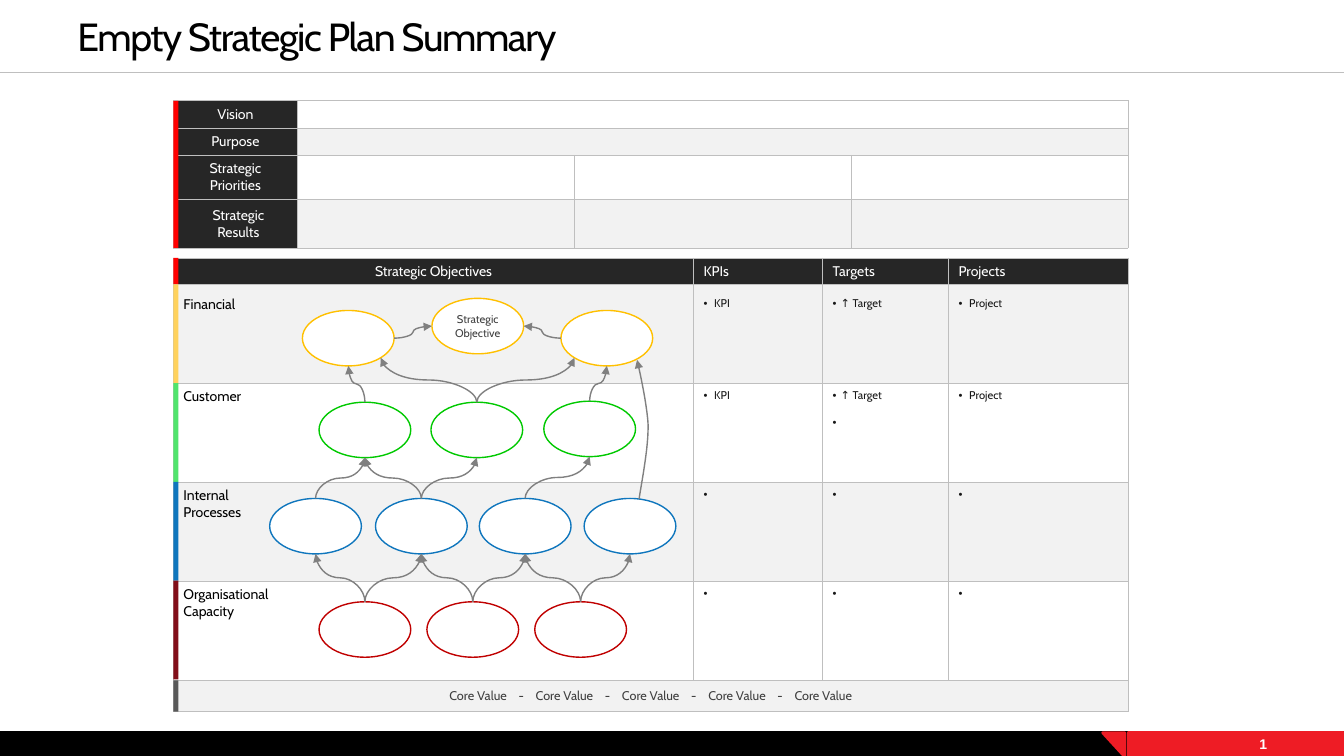
import math

import pptx
import pptx.dml.color
import pptx.enum.shapes
import pptx.enum.text
import pptx.oxml
import pptx.oxml.ns
import pptx.util

GRID = pptx.util.Inches(0.1)
WIDTH, HEIGHT = 133.33, 75
LEFT, TABLE_WIDTH, BAR = 17.2, 94.7, 0.5
OVAL_WIDTH, OVAL_HEIGHT = 9.1, 5.5
DARK, PALE, WHITE, BORDER, RED = "262626", "F2F2F2", "FFFFFF", "BFBFBF", "EE1C25"
SHAPES = pptx.enum.shapes.MSO_SHAPE
CENTER = pptx.enum.text.PP_ALIGN.CENTER
RIGHT = pptx.enum.text.PP_ALIGN.RIGHT
MIDDLE = pptx.enum.text.MSO_ANCHOR.MIDDLE
TOP = pptx.enum.text.MSO_ANCHOR.TOP
DIAGONAL = math.sqrt(0.5)
SIDES = {
    "top": (0, -1), "bottom": (0, 1), "left": (-1, 0), "right": (1, 0),
    "lower left": (-DIAGONAL, DIAGONAL), "lower right": (DIAGONAL, DIAGONAL),
}
OVALS = {
    "FFC000": [(34.55, 33.55), (47.4, 32.35), (60.2, 33.55)],
    "00C900": [(36.2, 42.65), (47.3, 42.65), (58.5, 42.55)],
    "0F76BD": [(31.3, 52.2), (41.8, 52.2), (52.1, 52.2), (62.5, 52.2)],
    "C00000": [(36.2, 62.45), (46.9, 62.45), (57.6, 62.45)],
}
FINANCIAL, CUSTOMER, PROCESS, CAPACITY = OVALS.values()
UPWARD_LINKS = [
    (CUSTOMER[0], FINANCIAL[0], "bottom"), (CUSTOMER[1], FINANCIAL[0], "lower right"),
    (CUSTOMER[1], FINANCIAL[2], "lower left"), (CUSTOMER[2], FINANCIAL[2], "bottom"),
    (PROCESS[0], CUSTOMER[0], "bottom"), (PROCESS[1], CUSTOMER[0], "bottom"),
    (PROCESS[1], CUSTOMER[1], "bottom"), (PROCESS[2], CUSTOMER[2], "bottom"),
] + [(CAPACITY[i], PROCESS[i + step], "bottom") for i in range(3) for step in (0, 1)]
LONG_CURVE = [
    ((63.4, 49.5), (63.8, 47), (64.3, 44.5), (64.3, 42.2)),
    ((64.3, 42.2), (64.2, 39.9), (63.2, 35.7), (63.2, 35.7)),
]


def grid(*cells):
    return [round(cell * GRID) for cell in cells]


def color(value):
    return pptx.dml.color.RGBColor.from_string(value)


def format_text(frame, size, text_color, font="Cabin", align=None, anchor=TOP, bold=False):
    frame.vertical_anchor = anchor
    for paragraph in frame.paragraphs:
        paragraph.alignment = align
        for run in paragraph.runs:
            run.font.size = pptx.util.Pt(size)
            run.font.name = font
            run.font.bold = bold
            run.font.color.rgb = color(text_color)


def set_margins(holder, left, top, right, bottom):
    holder.margin_left, holder.margin_top, holder.margin_right, holder.margin_bottom = grid(
        left, top, right, bottom)


def add_text(slide, box, text, size, text_color, **style):
    frame = slide.shapes.add_textbox(*grid(*box)).text_frame
    frame.word_wrap = True
    frame.text = text
    set_margins(frame, 1, 0, 1, 0)
    format_text(frame, size, text_color, anchor=MIDDLE, **style)
    return frame


def add_shape(slide, kind, box, fill, line=None, line_width=1):
    shape = slide.shapes.add_shape(kind, *grid(*box))
    shape.shadow.inherit = False
    shape.fill.solid()
    shape.fill.fore_color.rgb = color(fill)
    if line:
        shape.line.color.rgb = color(line)
        shape.line.width = pptx.util.Pt(line_width)
    else:
        shape.line.fill.background()
    return shape


def add_arrowhead(line):
    line.line.color.rgb = color("808080")
    line.line.width = pptx.util.Pt(1)
    pptx.oxml.ns.qn("a:ln")
    outline = line.line._get_or_add_ln()
    outline.append(element('<a:tailEnd {} type="triangle"/>'))


def element(markup):
    return pptx.oxml.parse_xml(markup.format(pptx.oxml.ns.nsdecls("a")))


def site(oval, side):
    return [center + share * length / 2 for center, share, length
            in zip(oval, SIDES[side], (OVAL_WIDTH, OVAL_HEIGHT))]


def add_curve(slide, start, end, upward=False):
    (x1, y1), (x2, y2) = start, end
    direction = 1 if x2 > x1 else -1
    if upward:
        middle_x, middle_y = (x1 + x2) / 2, (y1 + y2) / 2
        half_rise, half_run = (y1 - y2) / 2, abs(x2 - x1) / 2
        x1, x2 = middle_x + direction * half_rise, middle_x - direction * half_rise
        y1, y2 = middle_y + half_run, middle_y - half_run
    connector = slide.shapes.add_connector(
        pptx.enum.shapes.MSO_CONNECTOR.CURVE, *grid(x1, y1, x2, y2))
    properties = connector._element.spPr
    if upward:
        properties.xfrm.set("rot", str((90 if direction > 0 else 270) * 60000))
    add_arrowhead(connector)
    properties.append(element("<a:effectLst {}/>"))


def add_long_curve(slide):
    points = []
    for a, b, c, d in LONG_CURVE:
        for step in range(1, 13):
            t = step / 12
            points.append(grid(*[
                (1 - t) ** 3 * p + 3 * (1 - t) ** 2 * t * q + 3 * (1 - t) * t ** 2 * r + t ** 3 * s
                for p, q, r, s in zip(a, b, c, d)]))
    builder = slide.shapes.build_freeform(*grid(*LONG_CURVE[0][0]))
    builder.add_line_segments(points, close=False)
    curve = builder.convert_to_shape()
    curve.shadow.inherit = False
    curve.fill.background()
    add_arrowhead(curve)


def add_table(slide, top, columns, rows):
    table = slide.shapes.add_table(
        len(rows), len(columns), *grid(LEFT, top, TABLE_WIDTH, sum(rows))).table
    table.first_row = table.horz_banding = False
    for column, width in zip(table.columns, columns):
        column.width = grid(width)[0]
    for row, height in zip(table.rows, rows):
        row.height = grid(height)[0]
    return table


def fill_cell(cell, fill, text="", size=10, text_color="000000", **style):
    for edge in "LRTB":
        cell._tc.get_or_add_tcPr().append(element(
            f'<a:ln{edge} {{}} w="6350"><a:solidFill><a:srgbClr val="{BORDER}"/>'
            f'</a:solidFill></a:ln{edge}>'))
    cell.fill.solid()
    cell.fill.fore_color.rgb = color(fill)
    cell.text_frame.text = text
    format_text(cell.text_frame, size, text_color, **style)
    cell.vertical_anchor = style.get("anchor", TOP)
    if not text:
        cell.text_frame.paragraphs[0]._p.get_or_add_endParaRPr().set("sz", "1000")


def add_bullets(cell):
    for index, paragraph in enumerate(cell.text_frame.paragraphs):
        properties = paragraph._p.get_or_add_pPr()
        properties.set("marL", "73152")
        properties.set("indent", "-73152")
        properties.append(element('<a:buFont {} typeface="Arial"/>'))
        properties.append(element('<a:buChar {} char="•"/>'))
        if index:
            paragraph.space_before = pptx.util.Pt(10)


def add_direction_table(slide):
    labels = ["Vision", "Purpose", "Strategic\nPriorities", "Strategic\nResults"]
    table = add_table(slide, 10, [12.3] + [27.47] * 3, [2.7, 2.7, 4.4, 4.8])
    for row, label in enumerate(labels):
        anchor = MIDDLE if row > 1 else TOP
        fill_cell(table.cell(row, 0), DARK, label, 10, WHITE, align=CENTER, anchor=anchor)
        for column in range(1, 4):
            fill_cell(table.cell(row, column), PALE if row % 2 else WHITE)
        if row < 2:
            table.cell(row, 1).merge(table.cell(row, 3))
    table.cell(3, 0).margin_left = grid(1.6)[0]


def add_objectives_table(slide):
    headings = ["Strategic Objectives", "KPIs", "Targets", "Projects"]
    perspectives = [
        ["Financial", " KPI", "↑ Target", " Project"],
        ["Customer", " KPI", "↑ Target\n ", " Project"],
        ["Internal\vProcesses", " ", " ", " "],
        ["Organisational\vCapacity", " ", " ", " "],
    ]
    table = add_table(slide, 25.6, [51.6, 12.8, 12.5, 17.8], [2.6] + [9.83] * 4 + [3.1])
    for column, heading in enumerate(headings):
        cell = table.cell(0, column)
        fill_cell(cell, DARK, heading, 10, WHITE, align=None if column else CENTER, anchor=MIDDLE)
        set_margins(cell, 1, 0, 1, 0)
    for row, texts in enumerate(perspectives, 1):
        for column, text in enumerate(texts):
            cell = table.cell(row, column)
            fill_cell(cell, PALE if row % 2 else WHITE, text,
                      8 if column else 10, "181818" if column else "000000")
            if column:
                add_bullets(cell)
            if row == 1:
                cell.margin_top = grid(1.2)[0]
    for column in range(4):
        values = "\t" + "\t-\t".join(["Core Value"] * 5) if column == 0 else ""
        fill_cell(table.cell(5, column), PALE, values, 9, "404040", anchor=MIDDLE)
    stops = "".join(f'<a:tab pos="{grid(46.35 + 4.28 * (stop - 4))[0]}" algn="ctr"/>'
                    for stop in range(9))
    values_paragraph = table.cell(5, 0).text_frame.paragraphs[0]
    values_paragraph._p.get_or_add_pPr().append(element("<a:tabLst {}>" + stops + "</a:tabLst>"))
    table.cell(5, 0).merge(table.cell(5, 3))


def add_frame(slide):
    add_shape(slide, SHAPES.RECTANGLE, (0, 72.7, WIDTH, 2.4), "000000", "000000", 2.08)
    rule = slide.shapes.add_connector(
        pptx.enum.shapes.MSO_CONNECTOR.STRAIGHT, *grid(0, 7.2, WIDTH, 7.2))
    rule.line.color.rgb = color(BORDER)
    rule.line.width = pptx.util.Pt(1)
    rule._element.spPr.append(element("<a:effectLst {}/>"))
    add_shape(slide, SHAPES.RECTANGLE, (111.9, 72.7, 21.4, 2.4), RED, RED, 2.08)
    corner = add_shape(slide, SHAPES.RIGHT_TRIANGLE, (109.4, 72.7, 2.2, 2.4), RED, RED, 2.08)
    corner.rotation = 180
    title = add_text(slide, (6.7, 0.4, 97.2, 6.3), "Empty Strategic Plan Summary", 28, "000000")
    title.paragraphs[0].runs[0]._r.get_or_add_rPr().set("spc", "-100")
    add_text(slide, (111.1, 72.7, 15.6, 2.2), "1", 10, WHITE, font="Arial", align=RIGHT, bold=True)


def add_strategy_map(slide):
    for outline, centers in OVALS.items():
        for x, y in centers:
            box = (x - OVAL_WIDTH / 2, y - OVAL_HEIGHT / 2, OVAL_WIDTH, OVAL_HEIGHT)
            oval = add_shape(slide, SHAPES.OVAL, box, WHITE, outline)
            if (x, y) == FINANCIAL[1]:
                oval.text_frame.text = "Strategic Objective"
                set_margins(oval.text_frame, 0, 0, 0, 0)
                format_text(oval.text_frame, 8, "404040", align=CENTER, anchor=MIDDLE)
    for lower, upper, side in UPWARD_LINKS:
        add_curve(slide, site(lower, "top"), site(upper, side), upward=True)
    add_curve(slide, site(FINANCIAL[0], "right"), site(FINANCIAL[1], "left"))
    add_curve(slide, site(FINANCIAL[2], "left"), site(FINANCIAL[1], "right"))
    add_long_curve(slide)


def add_bars(slide):
    bars = [(10, 14.6, "FF0000"), (25.6, 2.6, "FF0000"), (67.5, 3.1, "595959")]
    bars += [(28.2 + 9.8 * row, 9.8, fill)
             for row, fill in enumerate(["FFD25D", "50E46C", "0F76BD", "820E19"])]
    for top, height, fill in bars:
        add_shape(slide, SHAPES.RECTANGLE, (LEFT, top, BAR, height), fill)


def main():
    presentation = pptx.Presentation()
    presentation.slide_width, presentation.slide_height = grid(WIDTH, HEIGHT)
    slide = presentation.slides.add_slide(presentation.slide_layouts[6])
    add_frame(slide)
    add_objectives_table(slide)
    add_direction_table(slide)
    add_strategy_map(slide)
    add_bars(slide)
    presentation.save("out.pptx")


if __name__ == "__main__":
    main()
